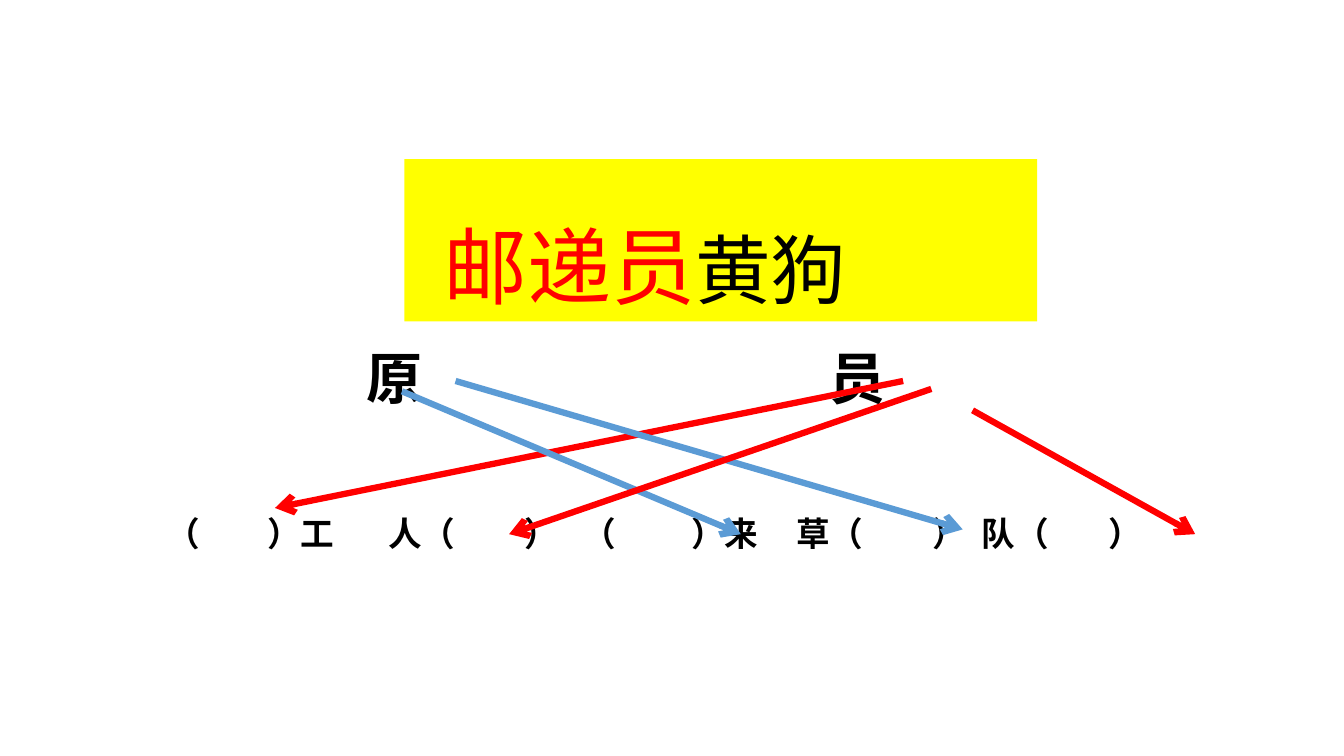
from dataclasses import dataclass

import pptx
import pptx.dml.color
import pptx.enum.shapes
import pptx.enum.text
import pptx.oxml
import pptx.oxml.ns
import pptx.util
from lxml import etree

Cm = pptx.util.Cm
RGB = pptx.dml.color.RGBColor
RED = RGB(0xFF, 0x00, 0x00)
BLUE = RGB(0x5B, 0x9B, 0xD5)
BLACK = RGB(0x00, 0x00, 0x00)
YELLOW = RGB(0xFF, 0xFF, 0x00)
FONT = "Cabin"


@dataclass
class Row:
    """A line of text whose words start at tab stops; lengths in cm."""
    left: float
    top: float
    width: float
    height: float
    size: int
    words: list[str]
    tabs: list[float]


@dataclass
class Arrow:
    """An arrow between two points in cm."""
    start: tuple[float, float]
    end: tuple[float, float]
    color: RGB


ROWS = [
    Row(8.99, 8.53, 18.85, 1.96, 40, ["原", "员"], [11.66]),
    Row(3.94, 12.8, 28.45, 1.27, 24,
        ["（", "）工", "人（", "）", "（", "）来", "草（", "）", "队（", "）"],
        [2.54, 5.59, 9.02, 10.49, 13.23, 15.88, 19.3, 20.55, 23.75]),
]

ARROWS = [
    Arrow((22.76, 9.6), (6.93, 12.8), RED),
    Arrow((24.51, 10.34), (30.12, 13.46), RED),
    Arrow((10.13, 9.86), (18.67, 13.46), BLUE),
    Arrow((11.48, 9.6), (24.26, 13.34), BLUE),
    Arrow((23.47, 9.8), (12.83, 13.46), RED),
]


def add_run(para, text: str, size: int, color: RGB, bold: bool = False) -> None:
    run = para.add_run()
    run.text = text
    run.font.name = FONT
    run.font.size = pptx.util.Pt(size)
    run.font.bold = bold
    run.font.color.rgb = color


def set_title(shape) -> None:
    shape.left, shape.top = Cm(10.19), Cm(4.01)
    shape.width, shape.height = Cm(15.95), Cm(4.09)
    shape.fill.solid()
    shape.fill.fore_color.rgb = YELLOW
    frame = shape.text_frame
    frame.auto_size = pptx.enum.text.MSO_AUTO_SIZE.NONE
    frame.vertical_anchor = pptx.enum.text.MSO_ANCHOR.TOP
    frame.word_wrap = True
    frame.margin_left = Cm(0.98)
    para = frame.paragraphs[0]
    para.alignment = pptx.enum.text.PP_ALIGN.LEFT
    para.line_spacing = 1.5
    add_run(para, "邮递员", 60, RED)
    add_run(para, "黄狗", 54, BLACK)


def add_row(slide, row: Row) -> None:
    box = slide.shapes.add_textbox(
        Cm(row.left), Cm(row.top), Cm(row.width), Cm(row.height))
    box.text_frame.word_wrap = True
    para = box.text_frame.paragraphs[0]
    stops = etree.SubElement(
        para._p.get_or_add_pPr(), pptx.oxml.ns.qn("a:tabLst"))
    for pos in row.tabs:
        etree.SubElement(stops, pptx.oxml.ns.qn("a:tab"),
                         pos=str(int(Cm(pos))), algn="l")
    add_run(para, "\t".join(row.words), row.size, BLACK, bold=True)


def add_arrow(slide, arrow: Arrow) -> None:
    points = [Cm(val) for val in arrow.start + arrow.end]
    line = slide.shapes.add_connector(
        pptx.enum.shapes.MSO_CONNECTOR.STRAIGHT, *points)
    line.line.color.rgb = arrow.color
    line.line.width = pptx.util.Pt(4.5)
    props = line._element.spPr
    etree.SubElement(props.find(pptx.oxml.ns.qn("a:ln")),
                     pptx.oxml.ns.qn("a:tailEnd"), type="arrow")
    etree.SubElement(props, pptx.oxml.ns.qn("a:effectLst"))


def main() -> None:
    deck = pptx.Presentation()
    deck.slide_width, deck.slide_height = Cm(33.87), Cm(19.05)
    slide = deck.slides.add_slide(deck.slide_layouts[5])

    # Yellow word banner
    set_title(slide.shapes.title)

    # The two characters and the blanks to fill
    for row in ROWS:
        add_row(slide, row)

    # Matching arrows
    for arrow in ARROWS:
        add_arrow(slide, arrow)

    deck.save("out.pptx")


if __name__ == "__main__":
    main()
